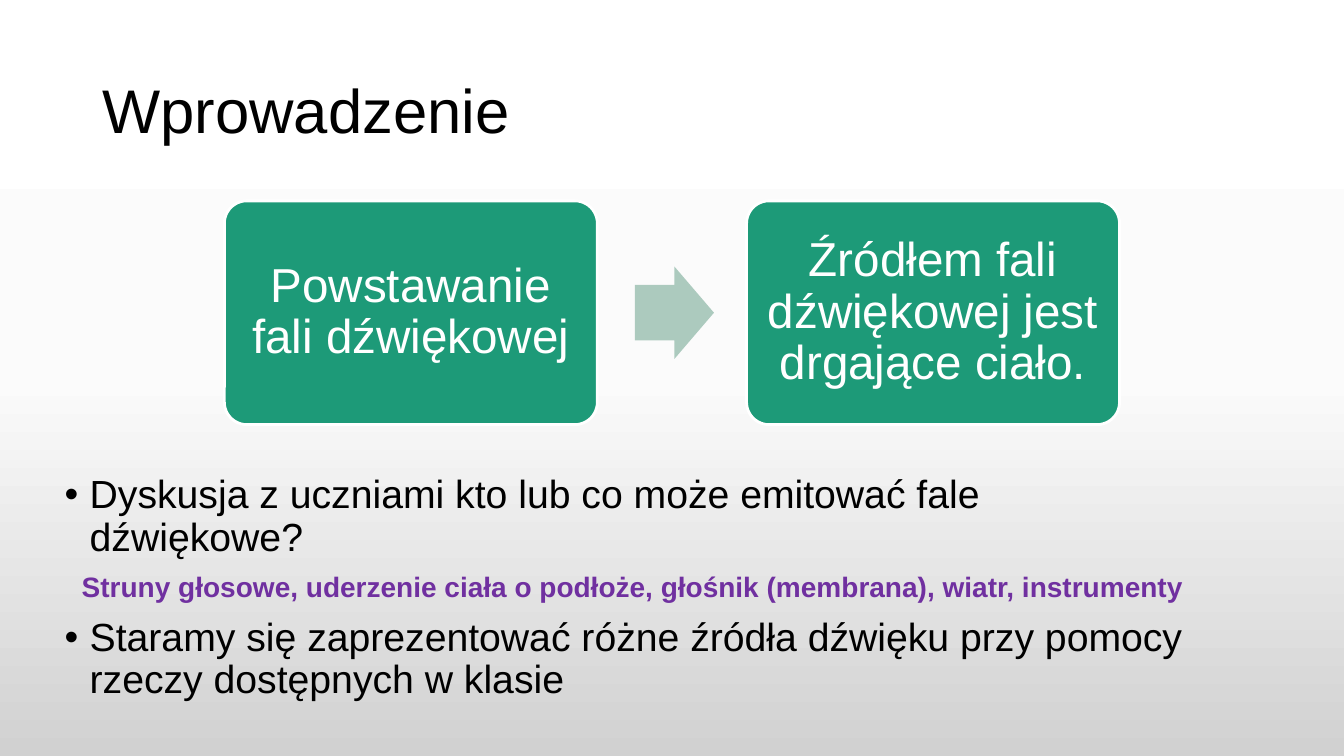
from copy import deepcopy

from lxml import etree
from pptx import Presentation
from pptx.dml.color import RGBColor
from pptx.enum import shapes, text
from pptx.oxml.ns import qn
from pptx.util import Pt

FONT = "Arial"
BLACK, WHITE, PURPLE = "000000", "FFFFFF", "7030A0"
GREEN, PALE_GREEN = "1D9A78", "ACCABE"


def color(hex_value):
    return RGBColor.from_string(hex_value)


def style(paragraph, size, hex_value, bold=False, align=text.PP_ALIGN.LEFT):
    paragraph.alignment = align
    paragraph.line_spacing = 0.9
    font = paragraph.font
    font.name, font.size, font.bold = FONT, Pt(size), bold
    font.color.rgb = color(hex_value)


def add_bullet(paragraph, indent=18):
    props = paragraph._p.get_or_add_pPr()
    props.set("marL", str(Pt(indent)))
    props.set("indent", str(-Pt(indent)))
    etree.SubElement(props, qn("a:buFont")).set("typeface", FONT)
    etree.SubElement(props, qn("a:buChar")).set("char", "•")
    # The schema puts bullets before the default run properties
    props.append(props.find(qn("a:defRPr")))


def paint_background(slide):
    fill = slide.background.fill
    fill.gradient()
    fill.gradient_angle = 270
    stop_list = slide._element.find(".//" + qn("a:gsLst"))
    stop_list.insert(1, deepcopy(stop_list[0]))
    stops = [(0, "FFFFFF"), (0.5, "FBFBFB"), (1, "D1D1D1")]
    for stop, (position, hex_value) in zip(fill.gradient_stops, stops):
        stop.position = position
        stop.color.rgb = color(hex_value)


def add_frame(slide, left, top, width, height, anchor):
    frame = slide.shapes.add_textbox(Pt(left), Pt(top), Pt(width), Pt(height)).text_frame
    frame.word_wrap = True
    frame.vertical_anchor = anchor
    return frame


def add_title(slide, left, top, width, height, wording):
    frame = add_frame(slide, left, top, width, height, text.MSO_ANCHOR.MIDDLE)
    frame.text = wording
    style(frame.paragraphs[0], 44, BLACK)


def add_block(slide, kind, left, top, width, height, fill):
    block = slide.shapes.add_shape(kind, Pt(left), Pt(top), Pt(width), Pt(height))
    block.shadow.inherit = False
    block.fill.solid()
    block.fill.fore_color.rgb = color(fill)
    block.line.fill.background()
    return block


def add_process(slide, left, top, width, height, steps):
    """Equal cards across the box, with an arrow in each gap."""
    card_width, arrow_width, arrow_height, arrow_offset = 266.4, 56.5, 66, 26.8
    pitch = (width - card_width) / (len(steps) - 1)
    for index, wording in enumerate(steps):
        card_left = left + index * pitch
        # Card
        card = add_block(slide, shapes.MSO_SHAPE.ROUNDED_RECTANGLE,
                         card_left, top, card_width, height, GREEN)
        card.adjustments[0] = 0.1
        card.line.color.rgb = color(WHITE)
        card.line.width = Pt(2)
        frame = card.text_frame
        frame.word_wrap = True
        frame.vertical_anchor = text.MSO_ANCHOR.MIDDLE
        frame.margin_left = frame.margin_right = Pt(10)
        frame.margin_top = frame.margin_bottom = Pt(10)
        frame.text = wording
        style(frame.paragraphs[0], 34, WHITE, align=text.PP_ALIGN.CENTER)
        # Arrow to the next card
        if index < len(steps) - 1:
            arrow = add_block(slide, shapes.MSO_SHAPE.RIGHT_ARROW,
                              card_left + card_width + arrow_offset,
                              top + (height - arrow_height) / 2,
                              arrow_width, arrow_height, PALE_GREEN)
            arrow.adjustments[0] = 0.6
            arrow.adjustments[1] = 0.5


def add_discussion(slide, left, top, width, height, question, answer, activity):
    frame = add_frame(slide, left, top, width, height, text.MSO_ANCHOR.TOP)
    frame.text = "\n".join([question, answer, activity])
    question_line, answer_line, activity_line = frame.paragraphs
    for bullet_line in (question_line, activity_line):
        style(bullet_line, 28, BLACK)
        add_bullet(bullet_line)
    style(answer_line, 20, PURPLE, bold=True, align=text.PP_ALIGN.CENTER)
    for later_line in (answer_line, activity_line):
        later_line.space_before = Pt(10)


def main():
    deck = Presentation()
    deck.slide_width, deck.slide_height = Pt(960), Pt(540)
    slide = deck.slides.add_slide(deck.slide_layouts[6])
    paint_background(slide)
    add_title(slide, 66, 28.75, 828, 104.4, "Wprowadzenie")
    add_process(slide, 160.3, 143.5, 639.4, 159.8,
                ["Powstawanie fali dźwiękowej",
                 "Źródłem fali dźwiękowej jest drgające ciało."])
    add_discussion(
        slide, 39, 335.6, 826, 190,
        "Dyskusja z uczniami kto lub co może emitować fale dźwiękowe?",
        "Struny głosowe, uderzenie ciała o podłoże, głośnik (membrana), wiatr, instrumenty",
        "Staramy się zaprezentować różne źródła dźwięku przy pomocy rzeczy dostępnych w klasie")
    deck.save("out.pptx")


if __name__ == "__main__":
    main()
